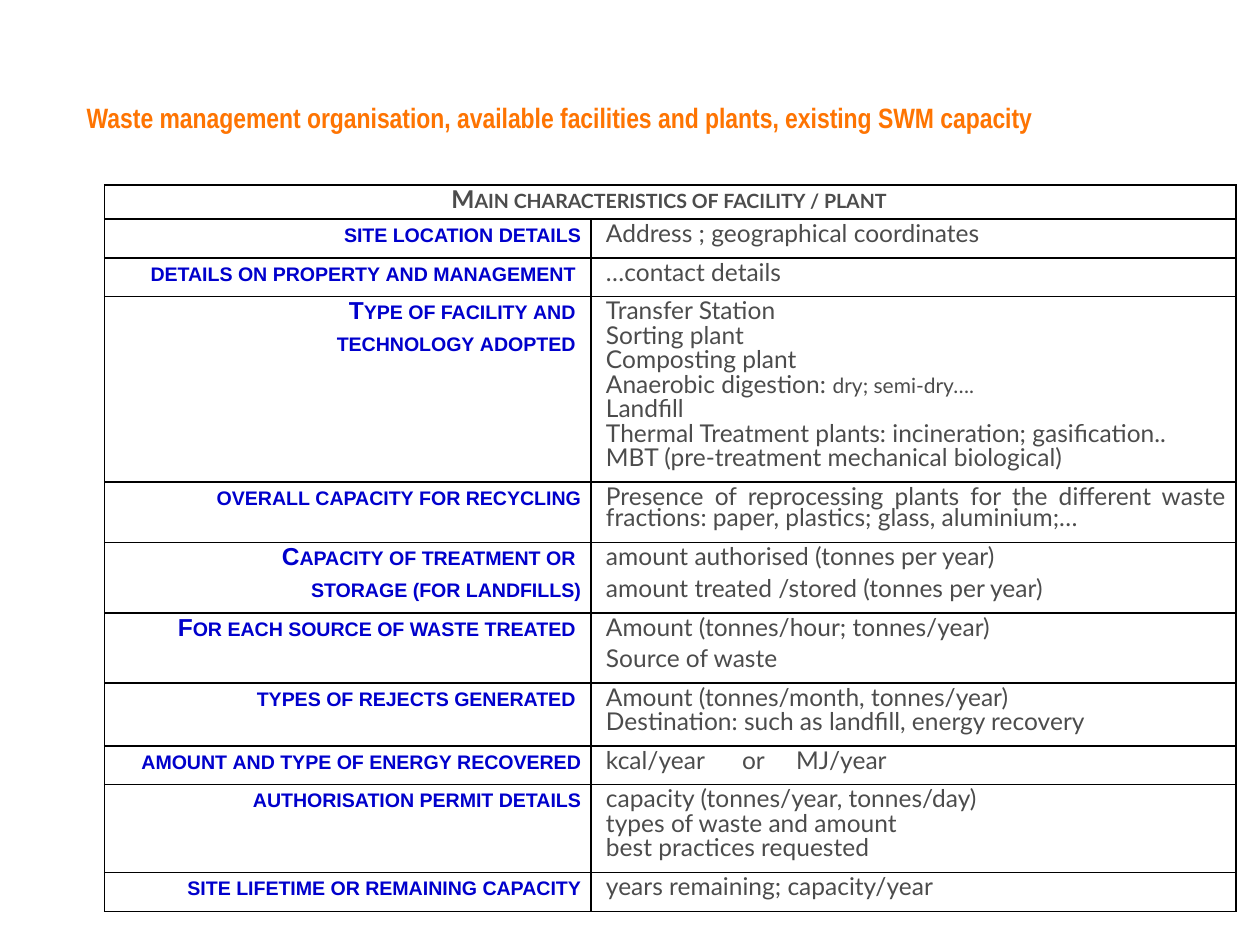
from lxml.etree import SubElement
from pptx import Presentation
from pptx.dml.color import RGBColor
from pptx.enum.text import MSO_ANCHOR, PP_ALIGN as Align
from pptx.oxml import parse_xml
from pptx.oxml.ns import nsdecls, qn
from pptx.util import Emu, Inches, Pt

GREY, BLUE, ORANGE, BLACK = "4C4C4C", "0000CC", "FE7402", "000000"
COLUMNS = (3.86, 5.12)
HEADER = "Main characteristics of facility / plant"
HEADER_HEIGHT = 0.27
TAB_STOPS = (1.08, 1.51)
SMALL_PRINT = "dry; semi-dry…."

FACILITY_ROWS = [
    (0.30, 2, ["site location details"], ["Address ; geographical coordinates"]),
    (0.30, 2, ["details on property and management "], ["…contact details"]),
    (1.47, 2, ["Type of facility and ", "technology adopted "],
     ["Transfer Station ", "Sorting plant", "Composting plant",
      "Anaerobic digestion: " + SMALL_PRINT, "Landfill",
      "Thermal Treatment plants: incineration; gasification..",
      "MBT (pre-treatment mechanical biological)"]),
    (0.48, 2, ["overall capacity for recycling"],
     ["Presence of reprocessing plants for the different waste fractions: "
      "paper, plastics; glass, aluminium;…"]),
    (0.55, 6, ["Capacity of treatment or ", "storage (for landfills)"],
     ["amount authorised (tonnes per year)",
      "amount treated /stored (tonnes per year)"]),
    (0.55, 6, ["For each source of waste treated "],
     ["Amount (tonnes/hour; tonnes/year)", "Source of waste"]),
    (0.50, 2, ["types of rejects generated "],
     ["Amount (tonnes/month, tonnes/year)",
      "Destination: such as landfill, energy recovery"]),
    (0.30, 2, ["amount and type of energy recovered"], ["kcal/year\tor\tMJ/year"]),
    (0.69, 2, ["authorisation permit details"],
     ["capacity (tonnes/year, tonnes/day)", "types of waste and amount",
      "best practices requested"]),
    (0.31, 3, ["site lifetime or remaining capacity"],
     ["years remaining; capacity/year"]),
]


def set_color(color_format, color):
    color_format.rgb = RGBColor.from_string(color)


def format_run(run, name, size, color, bold, small_caps=False):
    run.font.name = name
    run.font.size = Pt(size)
    run.font.bold = bold
    set_color(run.font.color, color)
    if small_caps:
        run.font._element.set("cap", "small")


def set_tab_stops(paragraph):
    tab_list = SubElement(paragraph._p.get_or_add_pPr(), qn("a:tabLst"))
    for stop in TAB_STOPS:
        SubElement(tab_list, qn("a:tab"), pos=str(Inches(stop)), algn="l")


def style_cell(cell, left=0.06, bottom=0.08):
    cell.margin_left, cell.margin_top = Inches(left), Inches(0.06)
    cell.margin_right, cell.margin_bottom = Inches(0.08), Inches(bottom)
    cell.fill.background()
    properties = cell._tc.get_or_add_tcPr()
    for index, side in enumerate("LRTB"):
        properties.insert(index, parse_xml(
            f'<a:ln{side} {nsdecls("a")} w="{Pt(1)}"><a:solidFill>'
            f'<a:srgbClr val="{BLACK}"/></a:solidFill></a:ln{side}>'))


def fill_cell(cell, lines, alignment, gap, name, color, heading):
    cell.text_frame.text = "\n".join(lines)
    for paragraph in cell.text_frame.paragraphs:
        paragraph.alignment = alignment
        paragraph.line_spacing = Pt(12)
        paragraph.space_before = Pt(gap)
        if "\t" in paragraph.text:
            set_tab_stops(paragraph)
        if paragraph.text.endswith(SMALL_PRINT):
            paragraph.runs[0].text = paragraph.text.removesuffix(SMALL_PRINT)
            paragraph.add_run().text = SMALL_PRINT
        for run in paragraph.runs:
            size = 12 if run.text == SMALL_PRINT else 14
            format_run(run, name, size, color, heading, heading)


def add_title(slide, text):
    box = slide.shapes.add_textbox(Inches(0.59), Inches(0.75), Inches(9.13), Inches(0.37))
    frame = box.text_frame
    frame.word_wrap = True
    frame.vertical_anchor = MSO_ANCHOR.MIDDLE
    frame.text = text
    format_run(frame.paragraphs[0].runs[0], "Arial Narrow", 16, ORANGE, True)


def add_facility_table(slide):
    heights = [HEADER_HEIGHT] + [row[0] for row in FACILITY_ROWS]
    table = slide.shapes.add_table(
        len(heights), len(COLUMNS), Inches(0.83), Inches(1.47),
        Inches(sum(COLUMNS)), Inches(sum(heights))).table
    table.first_row = table.horz_banding = False
    for column, width in zip(table.columns, COLUMNS):
        column.width = Inches(width)
    for row, height in zip(table.rows, heights):
        row.height = Inches(height)

    header = table.cell(0, 0)
    header.merge(table.cell(0, 1))
    for cell in table.rows[0].cells:
        style_cell(cell, bottom=0.04)
    fill_cell(header, [HEADER], Align.CENTER, 6, "Lato", GREY, True)

    for index, (_, gap, labels, values) in enumerate(FACILITY_ROWS, start=1):
        label_cell, value_cell = table.cell(index, 0), table.cell(index, 1)
        style_cell(label_cell)
        style_cell(value_cell, left=0.12)
        fill_cell(label_cell, labels, Align.RIGHT, 6, "Arial", BLUE, True)
        fill_cell(value_cell, values, Align.JUSTIFY, gap, "Lato", GREY, False)


def main():
    presentation = Presentation()
    presentation.slide_width, presentation.slide_height = Inches(10), Inches(7.5)
    slide = presentation.slides.add_slide(presentation.slide_layouts[6])
    add_facility_table(slide)
    add_title(slide, "Waste management organisation, available facilities and plants, "
                     "existing SWM capacity")
    presentation.save("out.pptx")


if __name__ == "__main__":
    main()
